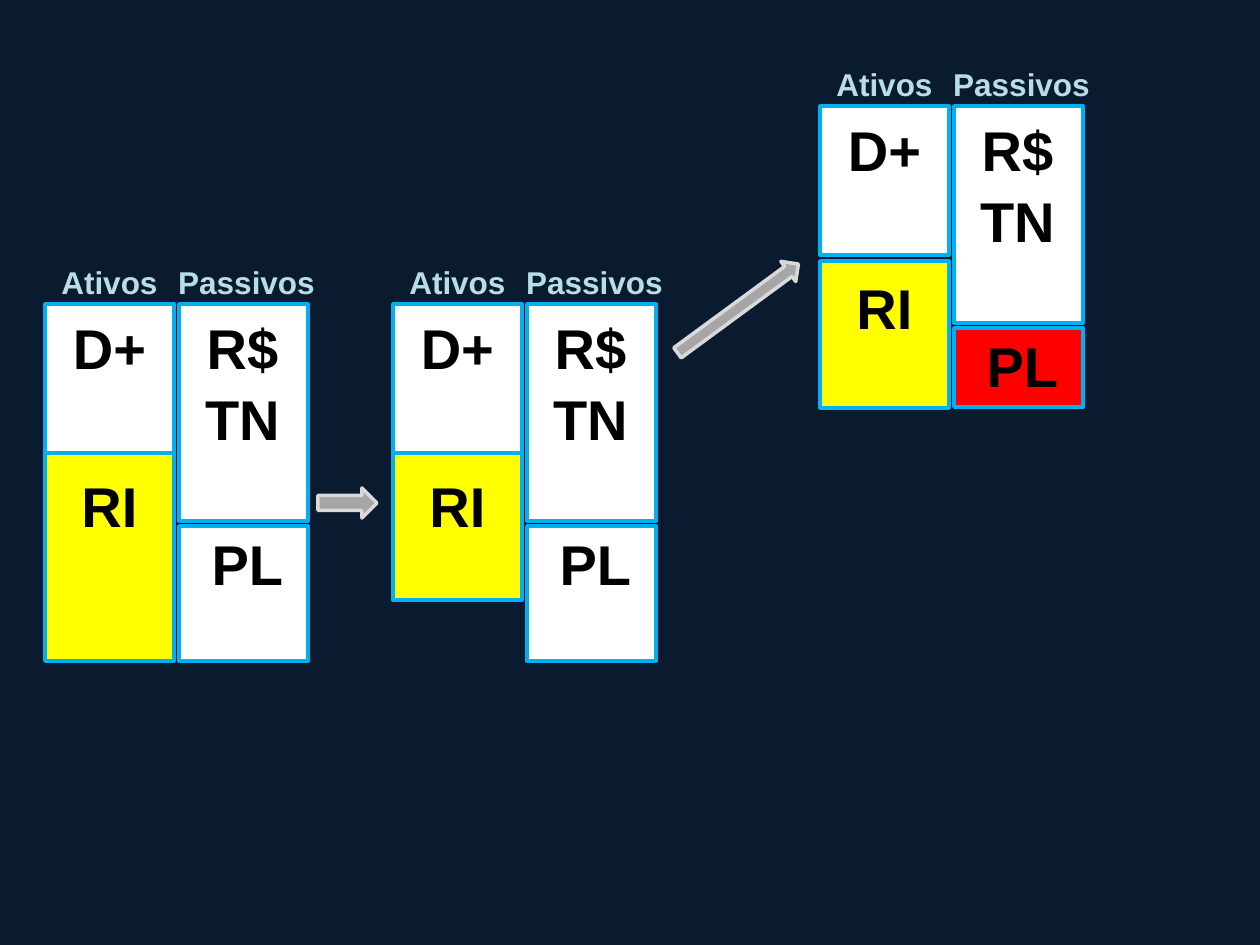
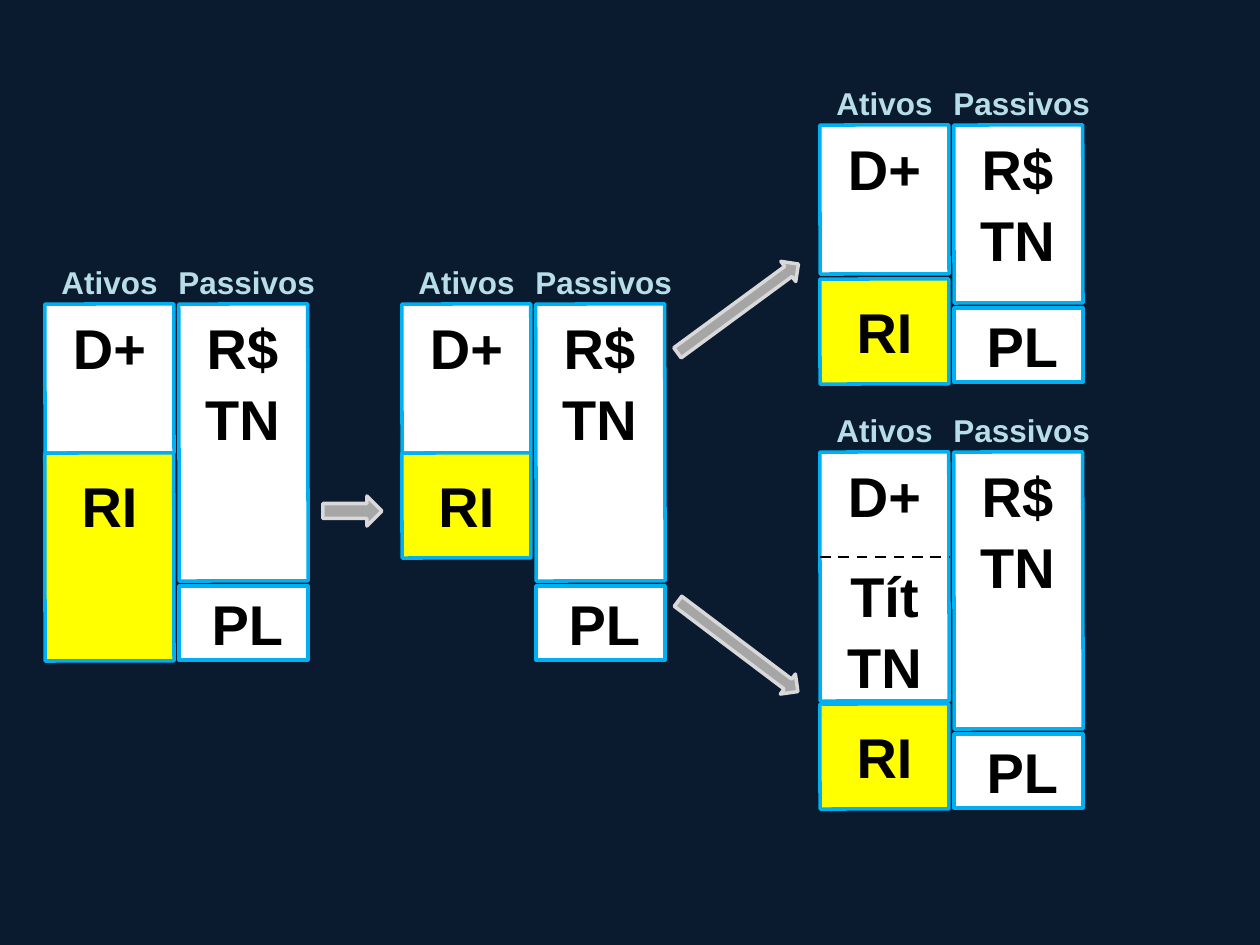
"""Build two slides of balance sheets joined by block arrows."""
import pptx
import pptx.util
import pptx.dml.color
import pptx.enum.dml
import pptx.enum.shapes
import pptx.enum.text
import pptx.oxml

RGB = pptx.dml.color.RGBColor
KIND = pptx.enum.shapes.MSO_SHAPE
NAVY = RGB(0x0B, 0x1B, 0x2F)
BLUE = RGB(0x00, 0xB0, 0xF0)
PALE = RGB(0xB7, 0xDE, 0xE8)
GRAY = RGB(0xA6, 0xA6, 0xA6)
SILVER = RGB(0xD9, 0xD9, 0xD9)
WHITE = RGB(0xFF, 0xFF, 0xFF)
YELLOW = RGB(0xFF, 0xFF, 0x00)
RED = RGB(0xFF, 0x00, 0x00)
BLACK = RGB(0x00, 0x00, 0x00)

SCALE = 914400 / 126
COL = 129
STEP = 134
CASH = 149
HEAD = {"size": pptx.util.Pt(18), "color": PALE}
BODY = {"size": pptx.util.Pt(32), "color": BLACK}


def px(*sizes):
    return [pptx.util.Emu(round(size * SCALE)) for size in sizes]


class Deck:
    """Hold the style and the slide being drawn."""

    def __init__(self):
        self.prs = pptx.Presentation()
        self.prs.slide_width, self.prs.slide_height = px(1260, 945)

    def page(self, tilt=0):
        self.tilt = tilt
        slide = self.prs.slides.add_slide(self.prs.slide_layouts[6])
        slide.background.fill.solid()
        slide.background.fill.fore_color.rgb = NAVY
        self.shapes = slide.shapes

    def block(self, kind, area, fill, edge, turn=0):
        shape = self.shapes.add_shape(kind, *px(*area))
        shape.shadow.inherit = False
        shape.rotation = turn
        shape.fill.solid()
        shape.fill.fore_color.rgb = fill
        shape.line.color.rgb = edge
        shape.line.width = pptx.util.Pt(2)

    def box(self, area, fill=WHITE, turn=0):
        self.block(KIND.RECTANGLE, area, fill, BLUE, turn)

    def arrow(self, area, turn=0):
        self.block(KIND.RIGHT_ARROW, area, GRAY, SILVER, turn)

    def text(self, area, words, style=BODY, turn=0):
        label = self.shapes.add_textbox(*px(*area))
        label.rotation = turn
        frame = label.text_frame
        frame.word_wrap = True
        frame.auto_size = pptx.enum.text.MSO_AUTO_SIZE.SHAPE_TO_FIT_TEXT
        frame.text = words
        for para in frame.paragraphs:
            para.alignment = pptx.enum.text.PP_ALIGN.CENTER
            para.line_spacing = 1.05
            font = para.runs[0].font
            form = {"name": "Arial", "bold": True, "size": style["size"]}
            for key, value in form.items():
                setattr(font, key, value)
            font.color.rgb = style["color"]

    def dash(self, left, top, right):
        ends = px(left, top, right, top)
        line = self.shapes.add_connector(
            pptx.enum.shapes.MSO_CONNECTOR.STRAIGHT, *ends)
        line.line.color.rgb = BLACK
        line.line.width = pptx.util.Pt(1.5)
        line.line.dash_style = pptx.enum.dml.MSO_LINE.DASH
        props = line._element.spPr
        props.append(pptx.oxml.parse_xml(
            '<a:effectLst xmlns:a='
            '"http://schemas.openxmlformats.org/drawingml/2006/main"/>'))

    def sheet(self, left, top, stock, debt, worth,
              cash=CASH, gap=0, drop=9, tone=WHITE):
        tilt = self.tilt
        side = left + STEP
        base = top + cash + gap
        foot = top + debt + 5
        self.box((left, top, COL, cash), turn=tilt)
        self.box((left, base, COL, stock), YELLOW, tilt)
        self.box((side, top, COL, debt), turn=tilt)
        self.box((side, foot, COL, worth), tone)
        self.text((left, top - 49, COL, 50), "Ativos", HEAD, tilt)
        self.text((left + 117, top - 49, 169, 50), "Passivos", HEAD, tilt)
        self.text((left, top, COL, 81), "D+", turn=tilt)
        self.text((left, base + drop, COL, 81), "RI", turn=tilt)
        self.text((side - 1, top, COL, 149), "R$\nTN", turn=tilt)
        self.text((side + 4, foot - 6, COL, 81), "PL")


def main():
    deck = Deck()
    rise = (663, 296, 150, 25)

    deck.page()
    deck.sheet(45, 304, 208, 217, 135)
    deck.arrow((318, 488, 59, 30))
    deck.sheet(393, 304, 147, 217, 135)
    deck.arrow(rise, -36.3)
    deck.sheet(820, 106, 147, 217, 79, gap=6, drop=3, tone=RED)

    deck.page(tilt=-0.1)
    deck.sheet(45, 304, 208, 277, 74)
    deck.arrow((323, 496, 59, 30))
    deck.sheet(402, 304, 105, 277, 74)
    deck.arrow(rise, -36.3)
    deck.sheet(820, 125, 105, 178, 74, gap=5)
    deck.arrow((663, 634, 150, 25), 37)
    deck.sheet(820, 452, 105, 277, 74, cash=249, gap=3)
    deck.text((820, 552, COL, 149), "Tít\nTN", turn=deck.tilt)
    deck.dash(820, 557, 949)

    deck.prs.save("out.pptx")


if __name__ == "__main__":
    main()
